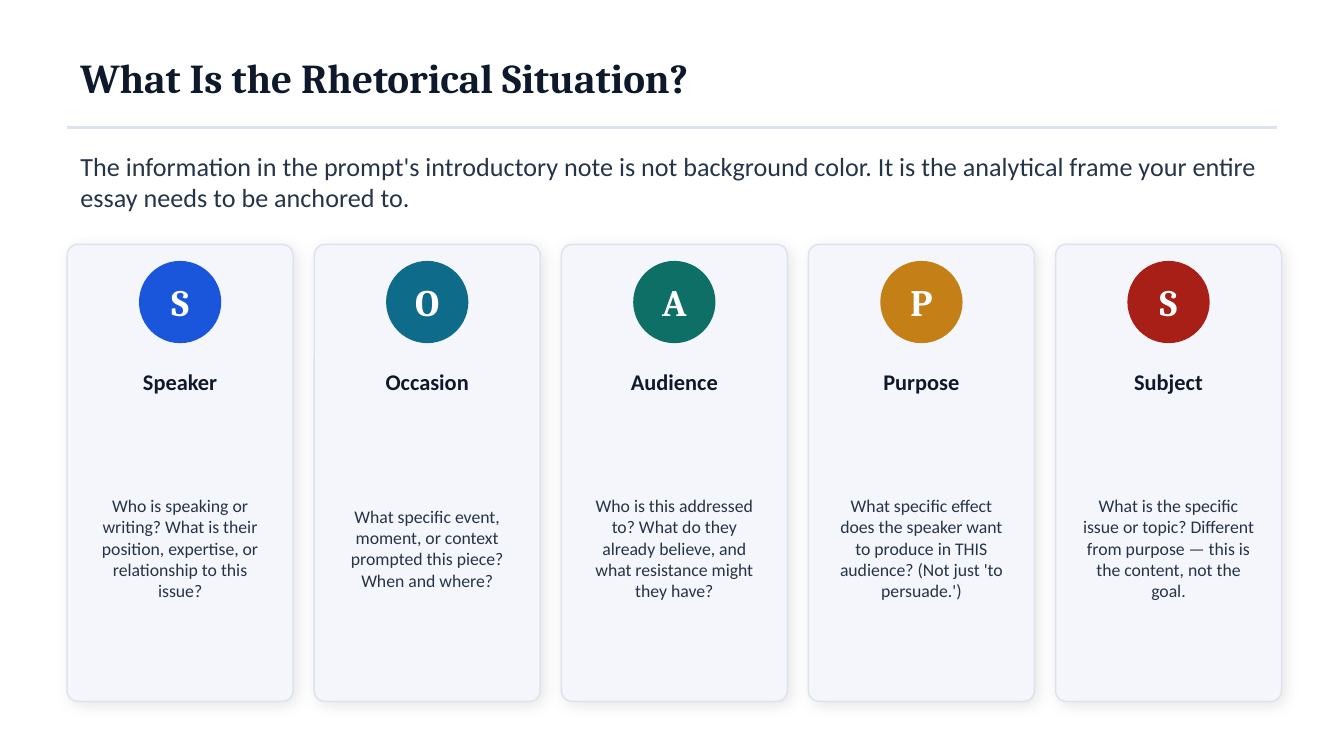
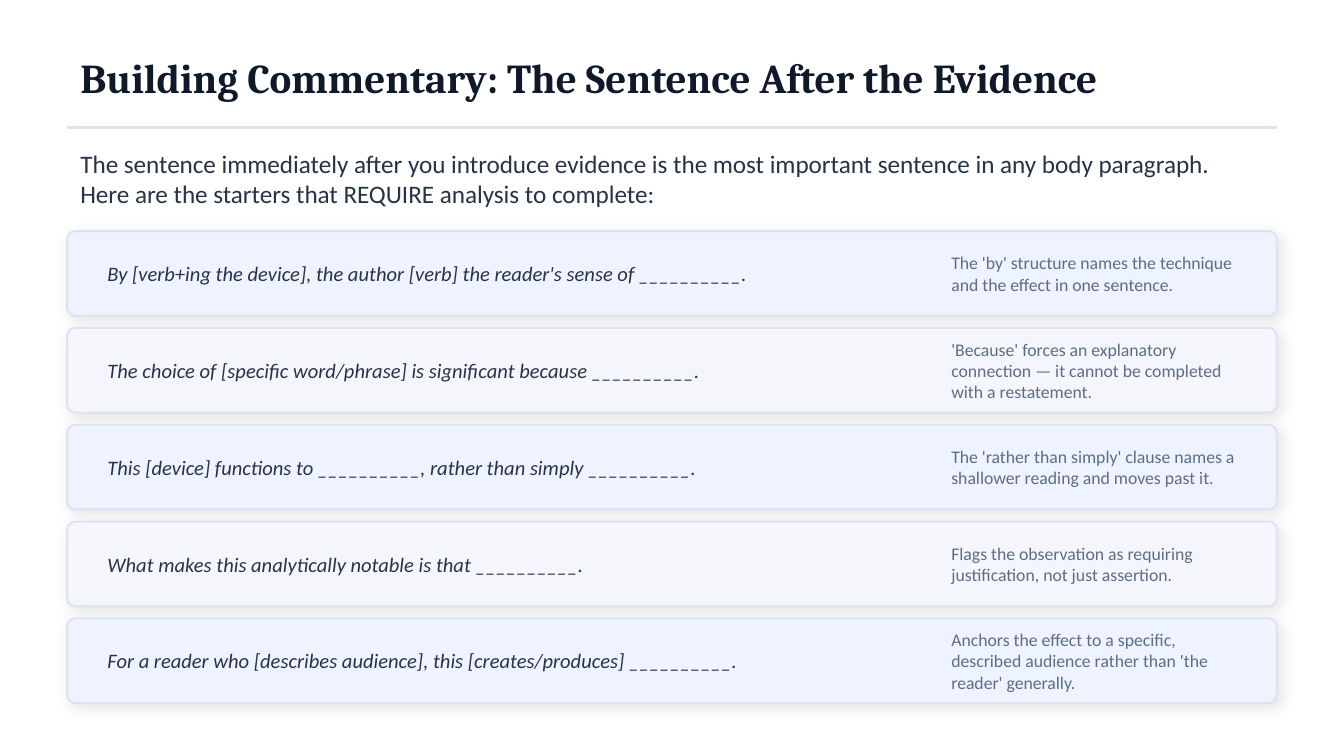
from dataclasses import dataclass

from lxml.etree import SubElement
from pptx import Presentation
from pptx.dml.color import RGBColor
from pptx.enum.shapes import MSO_CONNECTOR, MSO_SHAPE
from pptx.enum.text import MSO_ANCHOR as Anchor, PP_ALIGN as Align
from pptx.oxml.ns import qn
from pptx.util import Cm, Pt


@dataclass(frozen=True)
class Style:
    size: float
    color: str
    font: str = "Calibri"
    bold: bool = False
    italic: bool = False


@dataclass(frozen=True)
class Theme:
    background: str = "FFFFFF"
    panel: str = "F4F6FB"
    tint: str = "EEF3FF"
    border: str = "DCE3EF"
    shadow: str = "000000"
    title: Style = Style(22, "0E1A2B", "Cambria", bold=True)
    intro: Style = Style(14, "253448")
    compact_intro: Style = Style(13.5, "253448")
    initial: Style = Style(20, "FFFFFF", "Cambria", bold=True)
    label: Style = Style(12, "0E1A2B", bold=True)
    question: Style = Style(9.5, "253448")
    starter: Style = Style(11, "253448", italic=True)
    reason: Style = Style(9.5, "5A6E87")


THEME = Theme()
MARGIN = 1.27
CONTENT_WIDTH = 22.86

SITUATION = [
    ("Speaker", "1A56DB",
     "Who is speaking or writing? What is their position, expertise, or relationship to this issue?"),
    ("Occasion", "0E6B8A",
     "What specific event, moment, or context prompted this piece? When and where?"),
    ("Audience", "0D6F66",
     "Who is this addressed to? What do they already believe, and what resistance might they have?"),
    ("Purpose", "C47F17",
     "What specific effect does the speaker want to produce in THIS audience? (Not just 'to persuade.')"),
    ("Subject", "A71F17",
     "What is the specific issue or topic? Different from purpose — this is the content, not the goal."),
]

STARTERS = [
    ("By [verb+ing the device], the author [verb] the reader's sense of __________.",
     "The 'by' structure names the technique and the effect in one sentence."),
    ("The choice of [specific word/phrase] is significant because __________.",
     "'Because' forces an explanatory connection — it cannot be completed with a restatement."),
    ("This [device] functions to __________, rather than simply __________.",
     "The 'rather than simply' clause names a shallower reading and moves past it."),
    ("What makes this analytically notable is that __________.",
     "Flags the observation as requiring justification, not just assertion."),
    ("For a reader who [describes audience], this [creates/produces] __________.",
     "Anchors the effect to a specific, described audience rather than 'the reader' generally."),
]


def rgb(color):
    return RGBColor.from_string(color)


def write(frame, text, style, align):
    frame.word_wrap = True
    frame.vertical_anchor = Anchor.MIDDLE
    paragraph = frame.paragraphs[0]
    paragraph.alignment = align
    run = paragraph.add_run()
    run.text = text
    font = run.font
    font.name = style.font
    font.size = Pt(style.size)
    font.bold = style.bold
    font.italic = style.italic
    font.color.rgb = rgb(style.color)


def add_text(slide, left, top, width, height, text, style, align=Align.LEFT):
    box = slide.shapes.add_textbox(Cm(left), Cm(top), Cm(width), Cm(height))
    write(box.text_frame, text, style, align)


def add_outlined(slide, kind, left, top, width, height, fill, line, weight):
    shape = slide.shapes.add_shape(kind, Cm(left), Cm(top), Cm(width), Cm(height))
    shape.shadow.inherit = False
    shape.fill.solid()
    shape.fill.fore_color.rgb = rgb(fill)
    shape.line.color.rgb = rgb(line)
    shape.line.width = Pt(weight)
    return shape


def add_panel(slide, left, top, width, height, fill, weight, rounding):
    panel = add_outlined(slide, MSO_SHAPE.ROUNDED_RECTANGLE, left, top, width, height,
                         fill, THEME.border, weight)
    panel.adjustments[0] = rounding
    effects = panel.element.spPr.find(qn("a:effectLst"))
    shadow = SubElement(effects, qn("a:outerShdw"), blurRad=str(Pt(8)), dist=str(Pt(2)),
                        dir=str(45 * 60000), algn="bl", rotWithShape="0")
    color = SubElement(shadow, qn("a:srgbClr"), val=THEME.shadow)
    SubElement(color, qn("a:alpha"), val="10000")


def add_badge(slide, left, top, size, letter, color):
    badge = add_outlined(slide, MSO_SHAPE.OVAL, left, top, size, size, color, color, 1)
    frame = badge.text_frame
    frame.margin_left = frame.margin_right = frame.margin_top = frame.margin_bottom = 0
    write(frame, letter, THEME.initial, Align.CENTER)


def add_rule(slide, top):
    rule = slide.shapes.add_connector(MSO_CONNECTOR.STRAIGHT, Cm(MARGIN), Cm(top),
                                      Cm(MARGIN + CONTENT_WIDTH), Cm(top))
    rule.line.color.rgb = rgb(THEME.border)
    rule.line.width = Pt(1.2)
    SubElement(rule.element.spPr, qn("a:effectLst"))


def add_titled_slide(deck, title, intro, intro_height, intro_style):
    slide = deck.slides.add_slide(deck.slide_layouts[6])
    slide.background.fill.solid()
    slide.background.fill.fore_color.rgb = rgb(THEME.background)
    add_text(slide, MARGIN, 0.64, CONTENT_WIDTH, 1.65, title, THEME.title)
    add_rule(slide, 2.41)
    add_text(slide, MARGIN, 2.67, CONTENT_WIDTH, intro_height, intro, intro_style)
    return slide


def add_situation_card(slide, left, label, color, question):
    width, inset, badge_size = 4.27, 0.25, 1.52
    text_left, text_width = left + inset, width - 2 * inset
    add_panel(slide, left, 4.62, width, 8.64, THEME.panel, 0.8, 0.048)
    add_badge(slide, left + (width - badge_size) / 2, 4.95, badge_size, label[0], color)
    add_text(slide, text_left, 6.73, text_width, 0.97, label, THEME.label, Align.CENTER)
    add_text(slide, text_left, 7.82, text_width, 5.08, question, THEME.question, Align.CENTER)


def add_starter_row(slide, top, fill, starter, reason):
    height, inset = 1.6, 0.2
    text_top, text_height = top + inset, height - 2 * inset
    add_panel(slide, MARGIN, top, CONTENT_WIDTH, height, fill, 1, 0.095)
    add_text(slide, 1.78, text_top, 15.75, text_height, starter, THEME.starter)
    add_text(slide, 17.73, text_top, 5.89, text_height, reason, THEME.reason)


def build_situation(deck):
    slide = add_titled_slide(
        deck, "What Is the Rhetorical Situation?",
        "The information in the prompt's introductory note is not background color. "
        "It is the analytical frame your entire essay needs to be anchored to.",
        1.52, THEME.intro)
    for column, (label, color, question) in enumerate(SITUATION):
        add_situation_card(slide, MARGIN + column * 4.67, label, color, question)


def build_commentary(deck):
    slide = add_titled_slide(
        deck, "Building Commentary: The Sentence After the Evidence",
        "The sentence immediately after you introduce evidence is the most important "
        "sentence in any body paragraph. Here are the starters that REQUIRE analysis to complete:",
        1.4, THEME.compact_intro)
    fills = (THEME.tint, THEME.panel)
    for row, (starter, reason) in enumerate(STARTERS):
        add_starter_row(slide, 4.37 + row * 1.83, fills[row % 2], starter, reason)


def main():
    deck = Presentation()
    deck.slide_width = Cm(25.4)
    deck.slide_height = Cm(14.29)
    build_situation(deck)
    build_commentary(deck)
    deck.save("out.pptx")


if __name__ == "__main__":
    main()
